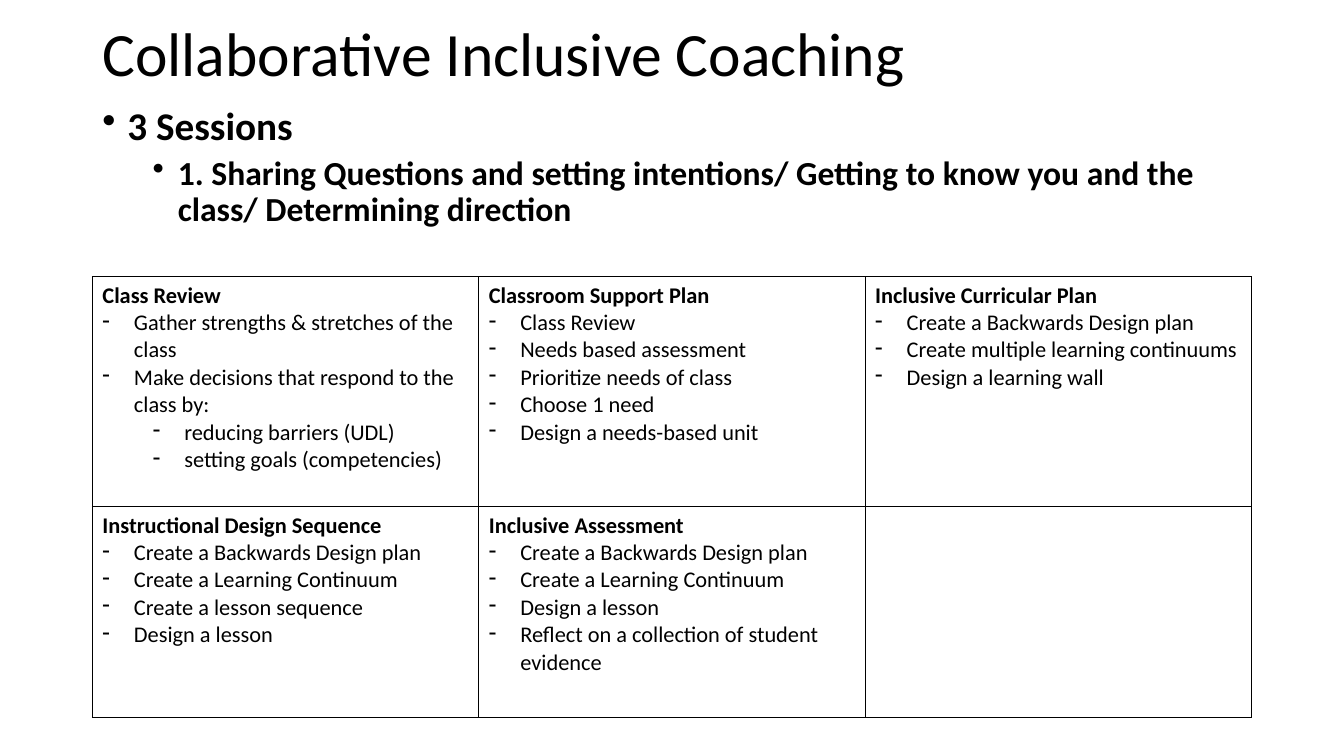
from dataclasses import dataclass

from lxml import etree
from pptx import Presentation
from pptx.dml.color import RGBColor
from pptx.enum import text
from pptx.oxml import ns
from pptx.util import Pt

FONT = "Calibri"
BLACK = "000000"
LEFT, WIDTH = 66, 828
ROW_HEIGHTS = (164.3, 150.7)


@dataclass
class Topic:
    heading: str
    points: tuple[str, ...]
    subpoints: tuple[str, ...] = ()


TOPICS = (
    (
        Topic(
            "Class Review",
            (
                "Gather strengths & stretches of the class",
                "Make decisions that respond to the class by:",
            ),
            ("reducing barriers (UDL)", "setting goals (competencies)"),
        ),
        Topic(
            "Classroom Support Plan",
            (
                "Class Review",
                "Needs based assessment",
                "Prioritize needs of class",
                "Choose 1 need",
                "Design a needs-based unit",
            ),
        ),
        Topic(
            "Inclusive Curricular Plan",
            (
                "Create a Backwards Design plan",
                "Create multiple learning continuums",
                "Design a learning wall",
            ),
        ),
    ),
    (
        Topic(
            "Instructional Design Sequence",
            (
                "Create a Backwards Design plan",
                "Create a Learning Continuum",
                "Create a lesson sequence",
                "Design a lesson",
            ),
        ),
        Topic(
            "Inclusive Assessment",
            (
                "Create a Backwards Design plan",
                "Create a Learning Continuum",
                "Design a lesson",
                "Reflect on a collection of student evidence",
            ),
        ),
    ),
)


def color(value: str) -> RGBColor:
    return RGBColor.from_string(value)


def add_text(frame, words: str, *, size: float, bold: bool = False, bullet: str = "",
             level: int = 0, margin: float = 0, hanging: float = 0,
             spacing: float = 1.0, before: float = 0) -> None:
    """Fill the frame's empty first paragraph, or append a new one."""
    para = frame.paragraphs[0]
    if para.runs:
        para = frame.add_paragraph()
    para.level = level
    if bullet:
        properties = para._p.get_or_add_pPr()
        properties.set("marL", str(Pt(margin)))
        properties.set("indent", str(-Pt(hanging)))
        etree.SubElement(properties, ns.qn("a:buChar"), char=bullet)
    para.alignment = text.PP_ALIGN.LEFT
    para.line_spacing = spacing
    para.space_before = Pt(before)
    span = para.add_run()
    span.text = words
    span.font.name = FONT
    span.font.size = Pt(size)
    span.font.bold = bold
    span.font.color.rgb = color(BLACK)


def add_borders(cell) -> None:
    properties = cell._tc.get_or_add_tcPr()
    for index, side in enumerate(("lnL", "lnR", "lnT", "lnB")):
        line = etree.Element(ns.qn(f"a:{side}"), w=str(Pt(1)))
        fill = etree.SubElement(line, ns.qn("a:solidFill"))
        etree.SubElement(fill, ns.qn("a:srgbClr"), val=BLACK)
        properties.insert(index, line)


def fill_topic(frame, topic: Topic) -> None:
    add_text(frame, topic.heading, size=16, bold=True)
    for level, points in enumerate((topic.points, topic.subpoints)):
        for point in points:
            add_text(frame, point, size=16, bullet="-", level=level,
                     margin=22.5 + 36 * level, hanging=22.5)


def add_title(page) -> None:
    title = page.shapes.title
    title.left, title.top, title.width, title.height = Pt(LEFT), Pt(8.6), Pt(WIDTH), Pt(64)
    frame = title.text_frame
    frame.auto_size = text.MSO_AUTO_SIZE.NONE
    frame.vertical_anchor = text.MSO_ANCHOR.MIDDLE
    add_text(frame, "Collaborative Inclusive Coaching", size=44, spacing=0.9)


def add_sessions(page) -> None:
    box = page.shapes.add_textbox(Pt(LEFT), Pt(72.7), Pt(WIDTH), Pt(413.3))
    frame = box.text_frame
    frame.word_wrap = True
    add_text(frame, "3 Sessions", size=28, bold=True, bullet="•",
             margin=18, hanging=18, spacing=0.9)
    add_text(
        frame,
        "1. Sharing Questions and setting intentions/ Getting to know you and the class/ "
        "Determining direction",
        size=24, bold=True, bullet="•", level=1, margin=54, hanging=18, spacing=0.9, before=5,
    )


def add_topics(page) -> None:
    table = page.shapes.add_table(
        len(ROW_HEIGHTS), 3, Pt(LEFT), Pt(197.7), Pt(WIDTH), Pt(sum(ROW_HEIGHTS))
    ).table
    table.first_row = table.horz_banding = False
    for row, height in zip(table.rows, ROW_HEIGHTS):
        row.height = Pt(height)
    for cell in table.iter_cells():
        cell.fill.background()
        add_borders(cell)
    for row, topics in enumerate(TOPICS):
        for column, topic in enumerate(topics):
            fill_topic(table.cell(row, column).text_frame, topic)


def main() -> None:
    deck = Presentation()
    deck.slide_width, deck.slide_height = Pt(960), Pt(540)
    page = deck.slides.add_slide(deck.slide_layouts.get_by_name("Title Only"))
    page.background.fill.solid()
    page.background.fill.fore_color.rgb = color("FFFFFF")
    add_title(page)
    add_sessions(page)
    add_topics(page)
    deck.save("out.pptx")


if __name__ == "__main__":
    main()
